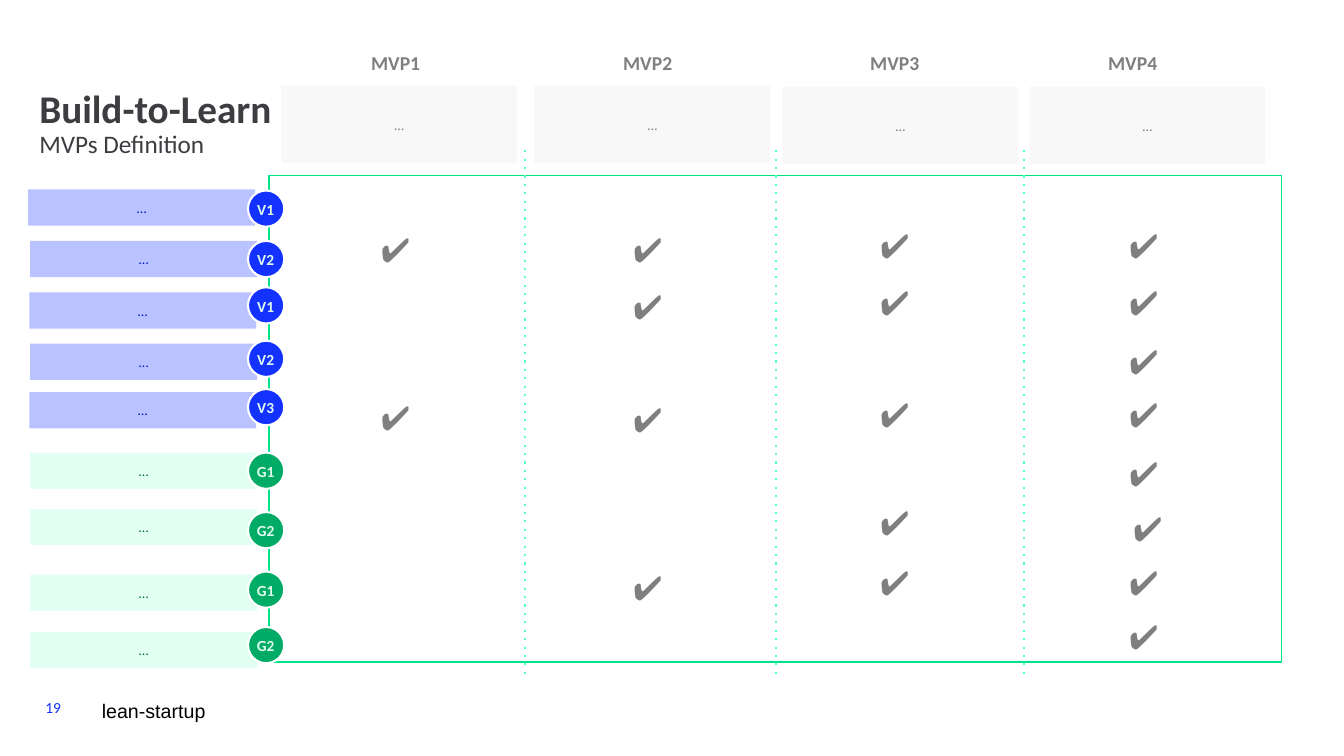
from lxml import etree
from pptx import Presentation
from pptx import util as u
from pptx.dml.color import RGBColor
from pptx.enum import dml, shapes, text
from pptx.oxml.ns import qn

SCALE = 9144  # EMU per px, 100 px to the inch
GREY = "7F7F7F"
MINT = "55FFBA"
GREEN = "00E487"
BLUE = "1432FF"
DOTS = "…"

# label left, box left, box top, check left, check tops
STAGES = [
    ("MVP1", 368, 279, 85, 351, [229, 396]),
    ("MVP2", 618, 530, 85, 601, [229, 286, 398, 564]),
    ("MVP3", 863, 776, 86, 846, [225, 282, 393, 500, 559]),
    ("MVP4", 1099, 1021, 86, 1093, [225, 282, 340, 393, 451, 506, 559, 613]),
]
NUDGE = {(1093, 506): 4}
BOLD = {(1093, 393), (1093, 613)}

# bar fill, bar text, badge fill, then rows of label, bar left, bar top, badge top
GROUPS = [
    ("7788FF", "001AD0", BLUE, [
        ("V1", 28, 188, 189), ("V2", 30, 239, 239), ("V1", 29, 290, 285),
        ("V2", 30, 341, 338), ("V3", 29, 389, 386)]),
    ("C6FFE8", "007243", "00AB65", [
        ("G1", 30, 449, 449), ("G2", 30, 505, 508),
        ("G1", 30, 570, 567), ("G2", 30, 627, 622)]),
]


def px(n):
    return u.Emu(n * SCALE)


def rgb(code):
    return RGBColor.from_string(code)


class Board:
    """Holds the slide and the text style shared by its elements."""

    face = "Calibri"

    def __init__(self, slide):
        self.slide = slide

    def frame(self, shape, pad=0, mid=False, wrap=True):
        style = {
            "margin_left": px(pad), "margin_right": px(pad),
            "margin_top": 0, "margin_bottom": 0, "word_wrap": wrap,
            "vertical_anchor": text.MSO_ANCHOR.MIDDLE if mid else text.MSO_ANCHOR.TOP,
            "auto_size": text.MSO_AUTO_SIZE.NONE if wrap
            else text.MSO_AUTO_SIZE.SHAPE_TO_FIT_TEXT,
        }
        for name, value in style.items():
            setattr(shape.text_frame, name, value)
        para = shape.text_frame.paragraphs[0]
        para.alignment = text.PP_ALIGN.CENTER if mid else text.PP_ALIGN.LEFT
        return para

    def run(self, para, words, size, color, bold=False, face=None):
        run = para.add_run()
        run.text = words
        style = {"size": u.Pt(size), "bold": bold, "name": face or self.face}
        for name, value in style.items():
            setattr(run.font, name, value)
        run.font.color.rgb = rgb(color)

    def title(self, box, head, sub):
        shape = self.slide.shapes.title
        for name, value in zip(("left", "top", "width", "height"), box):
            setattr(shape, name, px(value))
        para = self.frame(shape)
        para.line_spacing = 0.9
        self.run(para, head, 28, "3C3C41", True)
        self.run(para, sub, 18, "3C3C41")

    def label(self, box, words, size, color, bold=False, face=None,
              pad=0, mid=False, wrap=True, home=None):
        home = home or self.slide.shapes
        shape = home.add_textbox(*map(px, box))
        self.run(self.frame(shape, pad, mid, wrap), words, size, color, bold, face)

    def shape(self, kind, box, fill=None, line=None, width=1, home=None):
        home = home or self.slide.shapes
        shape = home.add_shape(kind, *map(px, box))
        shape.shadow.inherit = False
        if fill:
            shape.fill.solid()
            shape.fill.fore_color.rgb = rgb(fill)
        else:
            shape.fill.background()
        if line:
            shape.line.color.rgb = rgb(line)
            shape.line.width = u.Pt(width)
        else:
            shape.line.fill.background()
        return shape

    def bar(self, box, fill, color, pad):
        """Half-transparent box with a centred placeholder mark."""
        shape = self.shape(shapes.MSO_SHAPE.RECTANGLE, box, fill)
        for tint in shape.element.spPr.iter(qn("a:srgbClr")):
            etree.SubElement(tint, qn("a:alpha")).set("val", "50000")
        self.run(self.frame(shape, pad, True), DOTS, 10, color)

    def badge(self, left, top, words, fill):
        home = self.slide.shapes.add_group_shape().shapes
        self.shape(shapes.MSO_SHAPE.OVAL, (left, top, 36, 36), fill,
                   "FFFFFF", 1.5, home)
        self.label((left + 4, top + 5, 27, 27), words, 11, "DFFBF0", True,
                   mid=True, home=home)

    def rule(self, left, top, end):
        """Dotted vertical divider."""
        rule = self.slide.shapes.add_connector(
            shapes.MSO_CONNECTOR.STRAIGHT, *map(px, (left, top, left, end)))
        rule.line.color.rgb = rgb(MINT)
        rule.line.width = u.Pt(1.5)
        rule.line.dash_style = dml.MSO_LINE.ROUND_DOT
        props = rule.element.spPr
        for dash in props.iter(qn("a:prstDash")):
            dash.set("val", "dot")
        etree.SubElement(props, qn("a:effectLst"))


def main():
    deck = Presentation()
    deck.slide_width, deck.slide_height = px(1333), px(750)
    board = Board(deck.slides.add_slide(deck.slide_layouts[5]))

    board.title((39, 89, 240, 85), "Build-to-Learn ", "MVPs Definition")
    board.shape(shapes.MSO_SHAPE.RECTANGLE, (267, 174, 1004, 483), line=GREEN)
    for left in (521, 770, 1016):
        board.rule(left, 149, 674)

    for name, left, box, top, check, rows in STAGES:
        board.label((left, 51, 49, 24), name, 14, GREY, True, wrap=False)
        board.bar((box, top, 234, 77), "F2F2F2", GREY, 5)
        for row in rows:
            spot = (check, row)
            board.label((check + NUDGE.get(spot, 0), row, 83, 36), "✔", 24,
                        GREY, spot in BOLD, pad=5, mid=True)

    for fill, color, disc, rows in GROUPS:
        for name, left, top, dot in rows:
            board.bar((left, top, 225, 36), fill, color, 2)
            board.badge(246, dot, name, disc)

    board.label((101, 693, 397, 30), "lean-startup", 14, "000000", face="Arial")
    board.label((45, 693, 55, 30), "19", 11, BLUE)
    deck.save("out.pptx")


if __name__ == "__main__":
    main()
